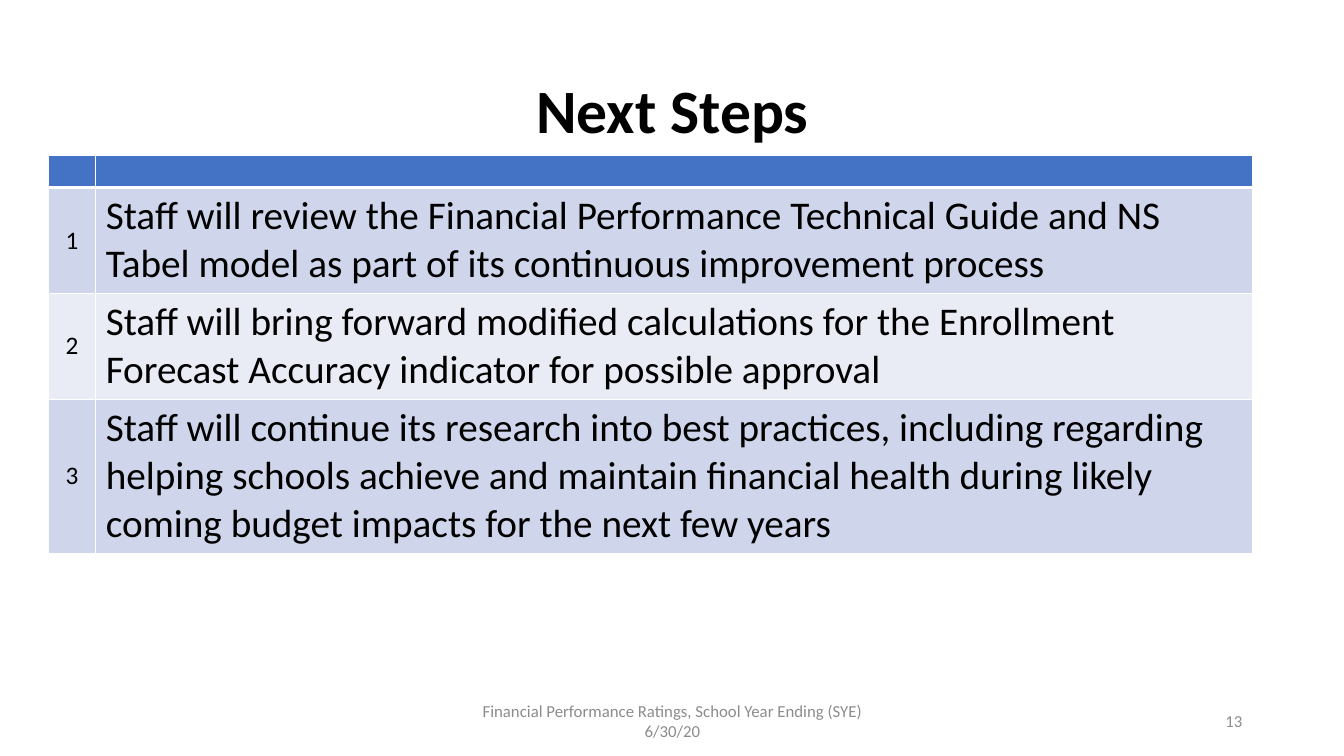
from dataclasses import dataclass

import lxml.etree
import pptx
import pptx.dml.color
import pptx.enum.text
import pptx.oxml.ns
import pptx.table
import pptx.text.text
import pptx.util

Inches = pptx.util.Inches
Pt = pptx.util.Pt
RGBColor = pptx.dml.color.RGBColor
ALIGN = pptx.enum.text.PP_ALIGN
MIDDLE = pptx.enum.text.MSO_ANCHOR.MIDDLE
qn = pptx.oxml.ns.qn

FONT = "Calibri"
BLACK = RGBColor(0x00, 0x00, 0x00)
WHITE = RGBColor(0xFF, 0xFF, 0xFF)
GRAY = RGBColor(0x8C, 0x8C, 0x8C)
HEADER = RGBColor(0x44, 0x72, 0xC4)
BANDS = (RGBColor(0xCF, 0xD5, 0xEA), RGBColor(0xE9, 0xEB, 0xF5))

COL_WIDTHS = (0.47, 11.47)
HEADER_HEIGHT = 0.32


@dataclass
class Step:
    text: str
    height: float


@dataclass
class Note:
    text: str
    left: float
    width: float
    align: ALIGN


STEPS = [
    Step("Staff will review the Financial Performance Technical Guide and NS "
         "Tabel model as part of its continuous improvement process", 1.05),
    Step("Staff will bring forward modified calculations for the Enrollment "
         "Forecast Accuracy indicator for possible approval", 1.05),
    Step("Staff will continue its research into best practices, including "
         "regarding helping schools achieve and maintain financial health "
         "during likely coming budget impacts for the next few years", 1.52),
]

NOTES = [
    Note("13", 9.42, 3, ALIGN.RIGHT),
    Note("Financial Performance Ratings, School Year Ending (SYE) 6/30/20",
         4.42, 4.5, ALIGN.CENTER),
]


def write(tf: pptx.text.text.TextFrame, text: str, size: float,
          color: RGBColor = BLACK, align: ALIGN = ALIGN.LEFT,
          bold: bool = False) -> None:
    p = tf.paragraphs[0]
    p.alignment = align
    r = p.add_run()
    r.text = text
    r.font.name = FONT
    r.font.size = Pt(size)
    r.font.bold = bold
    r.font.color.rgb = color


def style_cell(cell: pptx.table._Cell, color: RGBColor,
               top: float = 1, bottom: float = 1) -> None:
    tcPr = cell._tc.get_or_add_tcPr()
    for side, width in (("L", 1), ("R", 1), ("T", top), ("B", bottom)):
        ln = lxml.etree.SubElement(tcPr, qn(f"a:ln{side}"), w=str(Pt(width)))
        fill = lxml.etree.SubElement(ln, qn("a:solidFill"))
        lxml.etree.SubElement(fill, qn("a:srgbClr"), val=str(WHITE))
    cell.fill.solid()
    cell.fill.fore_color.rgb = color
    cell.vertical_anchor = MIDDLE


def add_steps(slide: pptx.slide.Slide) -> None:
    height = HEADER_HEIGHT + sum(step.height for step in STEPS)
    table = slide.shapes.add_table(
        len(STEPS) + 1, len(COL_WIDTHS), Inches(0.48), Inches(1.54),
        Inches(sum(COL_WIDTHS)), Inches(height)).table
    table.horz_banding = False
    for col, width in zip(table.columns, COL_WIDTHS):
        col.width = Inches(width)

    table.rows[0].height = Inches(HEADER_HEIGHT)
    for cell in table.rows[0].cells:
        style_cell(cell, HEADER, bottom=3)
        p = cell.text_frame.paragraphs[0]
        lxml.etree.SubElement(p._p, qn("a:endParaRPr"), sz="1200")

    for i, step in enumerate(STEPS, start=1):
        table.rows[i].height = Inches(step.height)
        number, body = table.rows[i].cells
        for cell in (number, body):
            style_cell(cell, BANDS[(i - 1) % 2], top=3 if i == 1 else 1)
        write(number.text_frame, str(i), 18, align=ALIGN.CENTER)
        write(body.text_frame, step.text, 28)


def add_note(slide: pptx.slide.Slide, note: Note) -> None:
    sp = slide.shapes.add_textbox(Inches(note.left), Inches(6.95),
                                  Inches(note.width), Inches(0.4))
    tf = sp.text_frame
    tf.word_wrap = True
    tf.vertical_anchor = MIDDLE
    write(tf, note.text, 12, GRAY, note.align)


def main() -> None:
    prs = pptx.Presentation()
    prs.slide_width = Inches(13.33)
    prs.slide_height = Inches(7.5)
    slide = prs.slides.add_slide(prs.slide_layouts[5])

    title = slide.shapes.title
    title.left, title.top = Inches(0.92), Inches(0.4)
    title.width, title.height = Inches(11.5), Inches(1.45)
    tf = title.text_frame
    tf.vertical_anchor = MIDDLE
    write(tf, "Next Steps", 44, align=ALIGN.CENTER, bold=True)
    tf.paragraphs[0].line_spacing = 0.9

    add_steps(slide)
    for note in NOTES:
        add_note(slide, note)
    prs.save("out.pptx")


if __name__ == "__main__":
    main()
